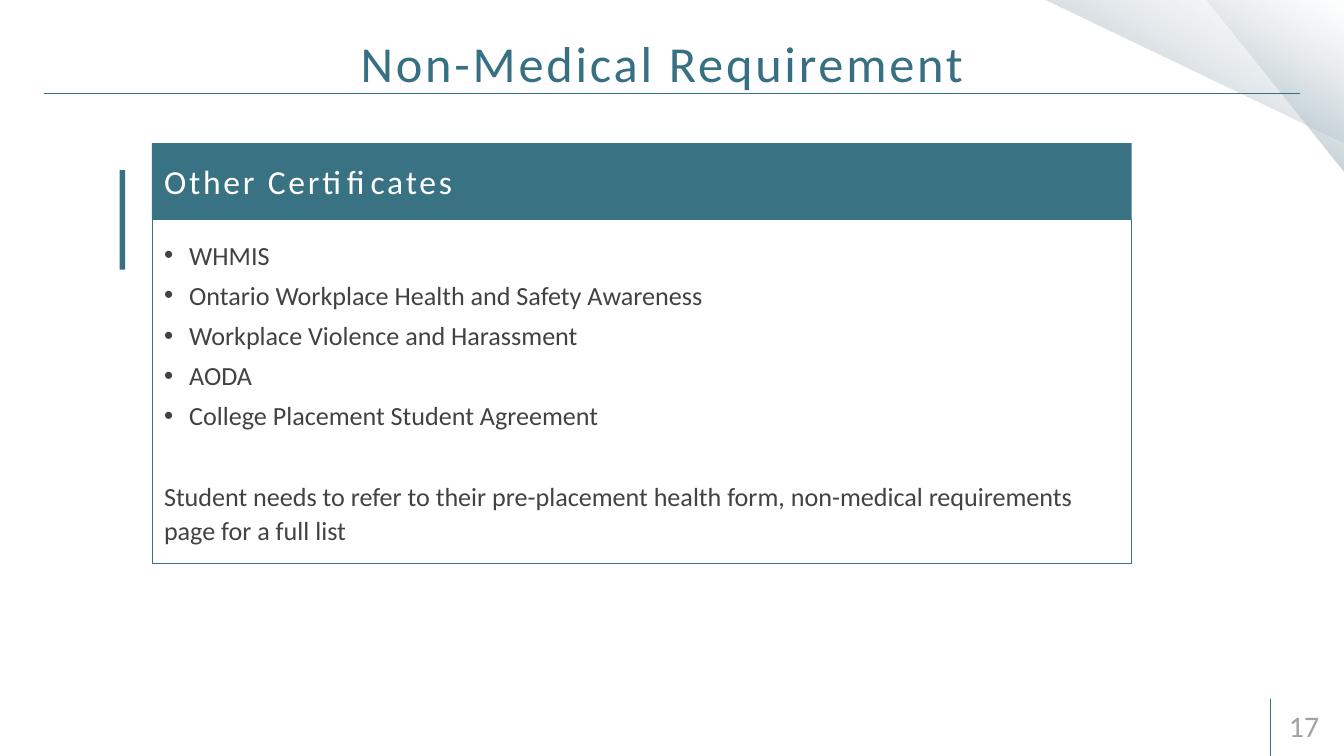
import pptx
import pptx.util
import pptx.dml.color
import pptx.enum.shapes
import pptx.enum.text
import pptx.oxml
import pptx.oxml.ns
import lxml.etree

Pt = pptx.util.Pt
RGB = pptx.dml.color.RGBColor.from_string
KIND = pptx.enum.shapes.MSO_SHAPE
ALIGN = pptx.enum.text.PP_ALIGN
qn = pptx.oxml.ns.qn

HUES = {"teal": "376F83", "head": "397283", "white": "FFFFFF",
        "text": "424242", "page": "A2A2A2"}
FADE = [(0, "9DB4C0", 100), (50, "B3C3CC", 44), (100, "E2E8EB", 0)]


def setup(shape, left, top, width, height):
    """Place a text shape and give its frame the shared margins."""
    shape.left, shape.top = Pt(left), Pt(top)
    shape.width, shape.height = Pt(width), Pt(height)
    frame = shape.text_frame
    frame.word_wrap = True
    frame.auto_size = pptx.enum.text.MSO_AUTO_SIZE.NONE
    frame.vertical_anchor = pptx.enum.text.MSO_ANCHOR.MIDDLE
    frame.margin_left = frame.margin_right = Pt(13)
    frame.margin_top = frame.margin_bottom = Pt(6.5)
    return frame


def write(para, text, size, hue, align=ALIGN.LEFT, track=0):
    """Add one run; track is the letter spacing in points."""
    para.alignment = align
    para.space_before = Pt(0)
    run = para.add_run()
    run.text = text
    run.font.name = "Calibri"
    run.font.size = Pt(size)
    run.font.bold = False
    run.font.color.rgb = RGB(HUES[hue])
    if track:
        run.font._element.set("spc", str(track * 100))


deck = pptx.Presentation()
deck.slide_width, deck.slide_height = Pt(1440), Pt(810)
slide = deck.slides.add_slide(deck.slide_layouts[4])
shapes = slide.shapes
title, head, body, *spare = slide.placeholders
for holder in spare:
    holder.element.getparent().remove(holder.element)

# Corner triangles, fading out towards the top right
stops = "".join(
    f'<a:gs pos="{pos * 1000}"><a:srgbClr val="{hue}">'
    f'<a:alpha val="{alpha * 1000}"/></a:srgbClr></a:gs>'
    for pos, hue, alpha in FADE)
fade = (f'<a:gradFill {pptx.oxml.ns.nsdecls("a")} rotWithShape="1">'
        f'<a:gsLst>{stops}</a:gsLst><a:lin ang="7200000" scaled="0"/></a:gradFill>')
for left, width, height in [(1293.1, 146.9, 185), (1118.9, 322.6, 153.4)]:
    wedge = shapes.add_shape(KIND.RIGHT_TRIANGLE, Pt(left), Pt(0), Pt(width), Pt(height))
    wedge.rotation = 180
    wedge.shadow.inherit = False
    wedge.line.fill.background()
    wedge.element.spPr.find(qn("a:prstGeom")).addnext(pptx.oxml.parse_xml(fade))

# Rules under the title and beside the page number
for x1, y1, x2, y2 in [(47.5, 100, 1392.5, 100), (1361.5, 810, 1361.5, 749)]:
    rule = shapes.add_connector(pptx.enum.shapes.MSO_CONNECTOR.STRAIGHT,
                                Pt(x1), Pt(y1), Pt(x2), Pt(y2))
    rule.line.color.rgb = RGB(HUES["teal"])
    rule.line.width = Pt(1)
    lxml.etree.SubElement(rule.element.spPr, qn("a:effectLst"))

bar = shapes.add_shape(KIND.RECTANGLE, Pt(128.2), Pt(182.2), Pt(5.8), Pt(106.6))
bar.shadow.inherit = False
bar.fill.solid()
bar.fill.fore_color.rgb = RGB(HUES["teal"])
bar.line.fill.background()

frame = setup(title, 50.4, 15.1, 1318.3, 103.7)
write(frame.paragraphs[0], "Non-Medical Requirement", 54, "teal", ALIGN.CENTER, 3)

page = shapes.add_textbox(Pt(0), Pt(0), Pt(0), Pt(0))
frame = setup(page, 1368, 755.3, 71.3, 43.2)
write(frame.paragraphs[0], "17", 32, "page")

frame = setup(head, 162.7, 153.4, 1049.8, 82)
head.fill.solid()
head.fill.fore_color.rgb = RGB(HUES["head"])
write(frame.paragraphs[0], "Other Certificates", 36, "white", track=3)

frame = setup(body, 162.7, 234.7, 1049.8, 368.6)
body.line.color.rgb = RGB(HUES["head"])
body.line.width = Pt(0.75)
items = ["WHMIS", "Ontario Workplace Health and Safety Awareness",
         "Workplace Violence and Harassment", "AODA",
         "College Placement Student Agreement"]
note = ("Student needs to refer to their pre-placement health form, "
        "non-medical requirements page for a full list")
for i, text in enumerate(items + [note]):
    para = frame.add_paragraph() if i else frame.paragraphs[0]
    props = para._p.get_or_add_pPr()
    listed = text != note
    dent = Pt(27) if listed else 0
    props.set("marL", str(dent))
    props.set("indent", str(-dent))
    if listed:
        lxml.etree.SubElement(props, qn("a:buChar")).set("char", "•")
    else:
        lxml.etree.SubElement(props, qn("a:buNone"))
    write(para, text, 28, "text")
    para.line_spacing = 1.1
    para.space_before = Pt(0 if listed else 43.5)
    para.space_after = Pt(6 if listed else 12)

deck.save("out.pptx")
